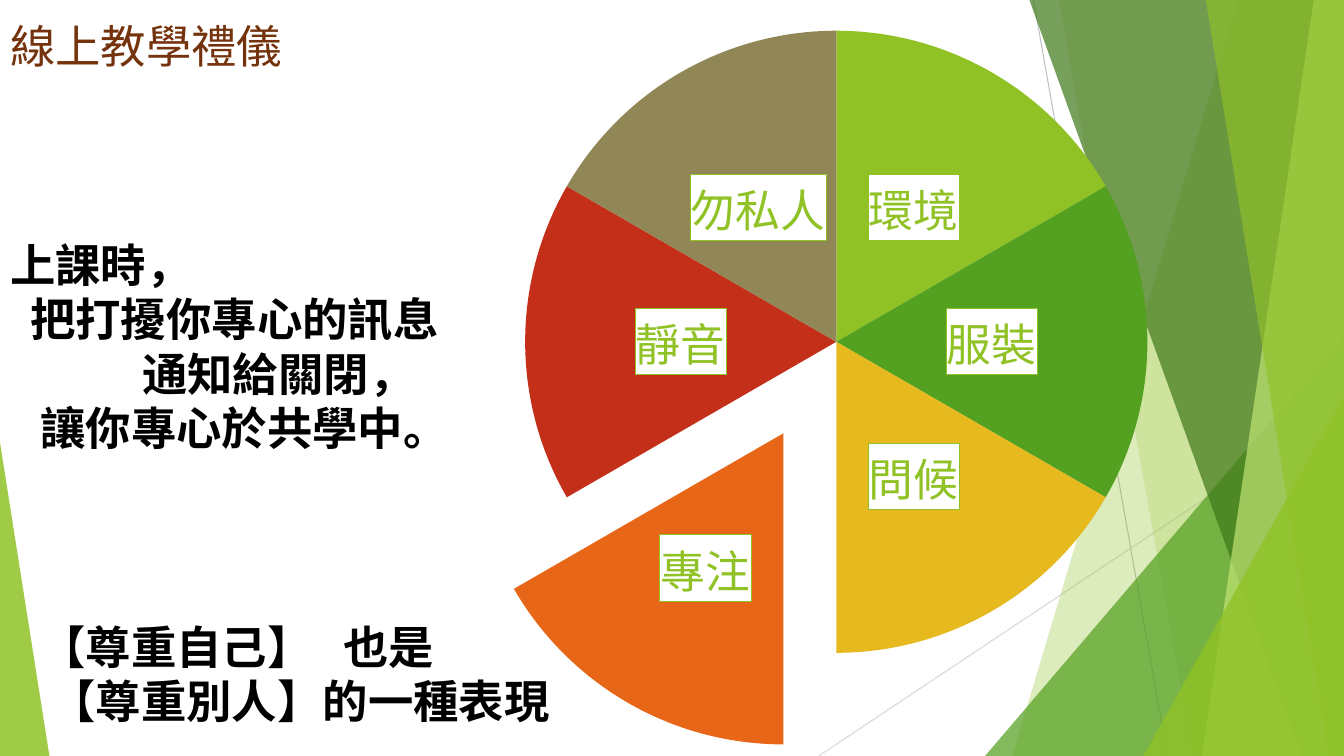
from dataclasses import dataclass

from lxml import etree
from pptx import Presentation
from pptx import util as u
from pptx.chart.data import CategoryChartData
from pptx.dml.color import RGBColor
from pptx.enum import chart as ch, shapes, text
from pptx.oxml import parse_xml
from pptx.oxml.ns import nsdecls, qn


@dataclass
class Theme:
    font: str = "Cabin"
    heading: str = "74330C"
    body: str = "000000"
    lime: str = "90C226"
    green: str = "54A021"
    dark: str = "3F7819"
    pale: str = "C0E474"
    slices: tuple = ("90C226", "54A021", "E6B91E", "E76618", "C42F1A", "918655")
    text_size: float = 32.4
    label_size: float = 32
    line_pitch: float = 39


class SlideBuilder:
    def __init__(self, prs, theme):
        self.theme = theme
        self.s = prs.slides.add_slide(prs.slide_layouts[5])

    def line(self, start, end, color):
        sp = self.s.shapes.add_connector(
            shapes.MSO_CONNECTOR.STRAIGHT, *map(u.Inches, start + end))
        sp.line.color.rgb = RGBColor.from_string(color)
        sp.line.width = u.Pt(0.75)
        etree.SubElement(sp._element.spPr, qn("a:effectLst"))

    def paint(self, sp, color, opacity):
        sp.shadow.inherit = False
        sp.fill.solid()
        sp.fill.fore_color.rgb = RGBColor.from_string(color)
        sp.line.fill.background()
        clr = sp._element.spPr.find(qn("a:solidFill"))[0]
        etree.SubElement(clr, qn("a:alpha"), val=str(opacity * 1000))

    def panel(self, top_x, bottom_x, color, opacity):
        corners = [(13.33, 0), (13.33, 7.5), (bottom_x, 7.5)]
        fb = self.s.shapes.build_freeform(u.Inches(top_x), 0)
        fb.add_line_segments([(u.Inches(x), u.Inches(y)) for x, y in corners])
        self.paint(fb.convert_to_shape(), color, opacity)

    def triangle(self, box, apex, color, opacity):
        sp = self.s.shapes.add_shape(
            shapes.MSO_SHAPE.ISOSCELES_TRIANGLE, *map(u.Inches, box))
        sp.adjustments[0] = apex
        self.paint(sp, color, opacity)

    def pie(self, box, layout, categories, value, exploded, explosion):
        t = self.theme
        data = CategoryChartData()
        data.categories = categories
        data.add_series("Series 1", [value] * len(categories))
        chart = self.s.shapes.add_chart(
            ch.XL_CHART_TYPE.PIE, *map(u.Inches, box), data).chart
        chart.has_legend = False
        chart.has_title = False
        chart.font.name = t.font
        chart.font.size = u.Pt(10)
        plot = chart.plots[0]
        plot.vary_by_categories = True
        series = plot.series[0]
        for i, color in enumerate(t.slices):
            fmt = series.points[i].format
            fmt.fill.solid()
            fmt.fill.fore_color.rgb = RGBColor.from_string(color)
            fmt.line.fill.background()
        sp_pr = series._element.xpath(f'c:dPt[c:idx/@val="{exploded}"]/c:spPr')[0]
        sp_pr.addprevious(parse_xml(
            f'<c:explosion {nsdecls("c")} val="{explosion}"/>'))
        self.pie_labels(series.data_labels)
        self.plot_layout(chart._chartSpace.chart.plotArea, layout)

    def pie_labels(self, labels):
        t = self.theme
        labels.show_category_name = True
        labels.show_value = False
        labels.show_percentage = False
        labels.position = ch.XL_LABEL_POSITION.CENTER
        labels.font.name = t.font
        labels.font.size = u.Pt(t.label_size)
        labels.font.color.rgb = RGBColor.from_string(t.lime)
        labels._element.find(qn("c:txPr")).addprevious(parse_xml(
            f'<c:spPr {nsdecls("c", "a")}>'
            '<a:solidFill><a:srgbClr val="FFFFFF"/></a:solidFill>'
            f'<a:ln w="9525"><a:solidFill><a:srgbClr val="{t.lime}"/>'
            '</a:solidFill></a:ln></c:spPr>'))

    def plot_layout(self, area, layout):
        for old in area.findall(qn("c:layout")):
            area.remove(old)
        sizes = "".join(f'<c:{k} val="{v}"/>' for k, v in zip("xywh", layout))
        area.insert(0, parse_xml(
            f'<c:layout {nsdecls("c")}><c:manualLayout>'
            '<c:layoutTarget val="inner"/><c:xMode val="edge"/>'
            f'<c:yMode val="edge"/>{sizes}</c:manualLayout></c:layout>'))

    def title(self, box, lines):
        t = self.theme
        sp = self.s.shapes.title
        sp.left, sp.top, sp.width, sp.height = map(u.Inches, box)
        self.s.shapes._spTree.append(sp._element)
        tf = sp.text_frame
        tf.word_wrap = True
        tf.auto_size = text.MSO_AUTO_SIZE.NONE
        tf.vertical_anchor = text.MSO_ANCHOR.TOP
        tf.text = "\n".join(line for line, _, _ in lines)
        for i, (p, (_, indent, gap)) in enumerate(zip(tf.paragraphs, lines)):
            p.alignment = text.PP_ALIGN.LEFT
            p.line_spacing = u.Pt(t.line_pitch)
            p.space_before = u.Pt(gap * t.line_pitch)
            p._p.get_or_add_pPr().set("marL", str(u.Inches(indent)))
            words = p.text.split(" ")
            if len(words) > 1:
                p.text = words[0]
                for part in (" ", words[1]):
                    p.add_run().text = part
                p.runs[1]._r.get_or_add_rPr().set("spc", "1460")
            for r in p.runs:
                r.font.name = t.font
                r.font.size = u.Pt(t.text_size)
                r.font.bold = i > 0
                r.font.color.rgb = RGBColor.from_string(t.body if i else t.heading)


def main():
    prs = Presentation()
    prs.slide_width, prs.slide_height = u.Inches(13.33), u.Inches(7.5)
    t = Theme()
    b = SlideBuilder(prs, t)
    b.line((10.25, 0), (11.58, 7.5), "BFBFBF")
    b.line((13.33, 4.03), (8.12, 7.5), "D9D9D9")
    b.panel(12.28, 10.04, t.lime, 30)
    b.panel(10.5, 11.83, t.lime, 20)
    b.triangle((9.77, 3.33, 3.56, 4.17), 1, t.green, 72)
    b.panel(10.21, 12.91, t.dark, 70)
    b.panel(13.03, 11.92, t.pale, 70)
    b.panel(11.96, 13.18, t.lime, 65)
    b.triangle((11.34, 3.93, 1.99, 3.57), 1, t.lime, 80)
    b.triangle((0, 4.39, 0.49, 3.11), 0, t.lime, 85)
    b.pie((0.53, -0.13, 13.33, 8.04), (0.351, 0.054, 0.463, 0.768),
          ["環境", "服裝", "問候", "專注", "靜音", "勿私人"], 17,
          exploded=3, explosion=34)
    b.title((0, 0.13, 9.4, 7.2), [
        ("線上教學禮儀", 0, 0),
        ("上課時，", 0, 3),
        ("把打擾你專心的訊息", 0.2, 0),
        ("通知給關閉，", 1.31, 0),
        ("讓你專心於共學中。", 0.3, 0),
        ("【尊重自己】 也是", 0.3, 3),
        ("【尊重別人】的一種表現", 0.4, 0),
    ])
    prs.save("out.pptx")


if __name__ == "__main__":
    main()
